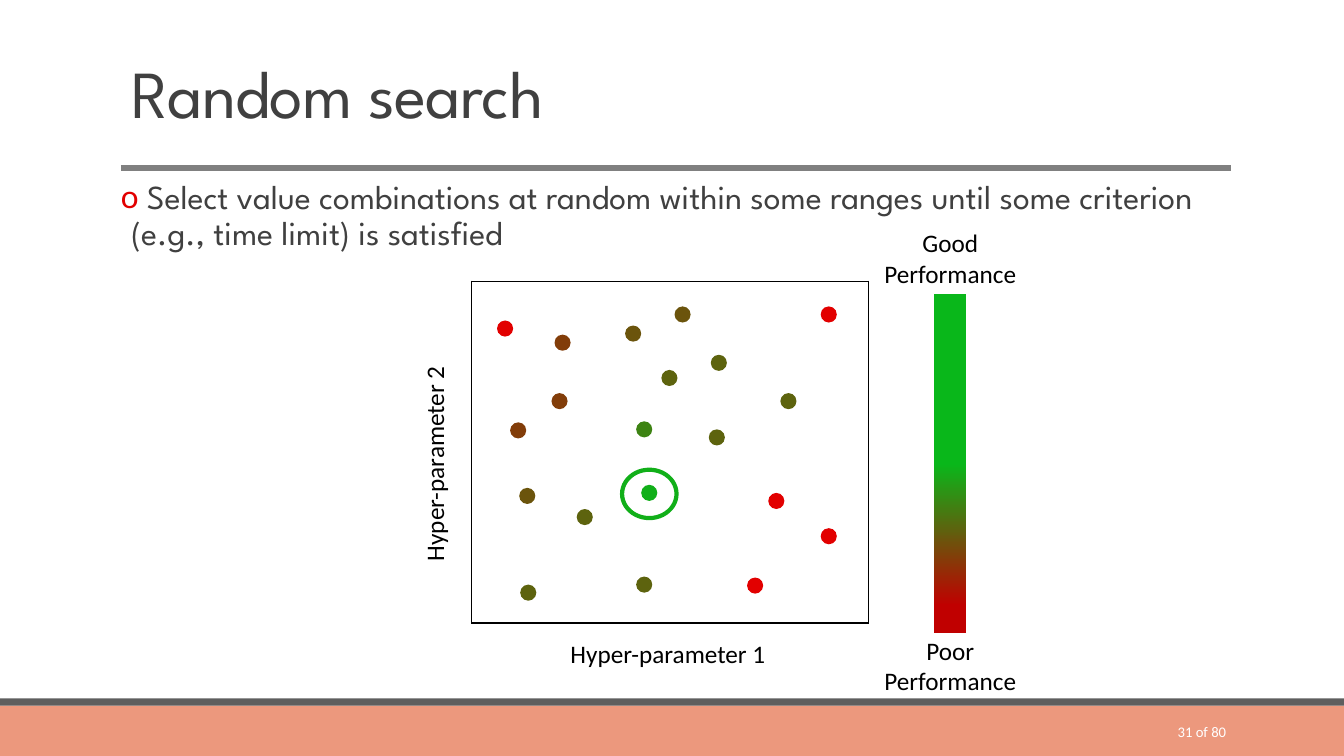
from pptx import Presentation
from pptx import util as u
from pptx.dml.color import RGBColor
from pptx.enum import shapes, text
from pptx.oxml import parse_xml
from pptx.oxml.ns import nsdecls

Inches, Pt = u.Inches, u.Pt
HEADING, PLAIN = "League Spartan", "Calibri"
RED, BROWN, UMBER, OLIVE = "E20000", "823D09", "6B540C", "5D630E"
LEAF, GREEN, BLACK, GREY = "3D8313", "11AF19", "000000", "404040"
DOT_SIZE = 0.16

# Left and top of each sampled combination, grouped by performance colour
SAMPLES = {
    RED: [(8.14, 5.24), (7.62, 4.89), (7.41, 5.73), (8.14, 3.04), (4.93, 3.18)],
    BROWN: [(5.5, 3.32), (5.47, 3.9), (5.06, 4.19)],
    UMBER: [(5.15, 4.84), (6.2, 3.23), (6.69, 3.04)],
    OLIVE: [(7.74, 3.9), (7.03, 4.26), (5.16, 5.8), (5.72, 5.05),
            (6.56, 3.67), (6.31, 5.72), (7.05, 3.52)],
    LEAF: [(6.31, 4.18)],
    GREEN: [(6.36, 4.81)],
}


def colour(value):
    return RGBColor.from_string(value)


def place(item, left, top, width, height):
    item.left, item.top = Inches(left), Inches(top)
    item.width, item.height = Inches(width), Inches(height)


def write(box, lines, size=18, font=PLAIN, fill=BLACK, align="LEFT",
          anchor="TOP", spacing=None):
    """Fill a text box or placeholder with one paragraph per line."""
    frame = box.text_frame
    frame.word_wrap = True
    frame.auto_size = text.MSO_AUTO_SIZE.NONE
    frame.vertical_anchor = getattr(text.MSO_ANCHOR, anchor)
    for index, line in enumerate(lines):
        para = frame.add_paragraph() if index else frame.paragraphs[0]
        para.alignment = getattr(text.PP_ALIGN, align)
        para.space_before = Pt(0)
        para.line_spacing = spacing
        span = para.add_run()
        span.text = line
        span.font.size, span.font.name = Pt(size), font
        span.font.color.rgb = colour(fill)
    return frame


def add_label(page, lines, left, top, width, height, rotation=0, **style):
    box = page.shapes.add_textbox(0, 0, 0, 0)
    place(box, left, top, width, height)
    box.rotation = rotation
    write(box, lines, **style)


def add_figure(page, kind, left, top, width, height, fill=None, outline=None):
    figure = page.shapes.add_shape(getattr(shapes.MSO_SHAPE, kind), 0, 0, 0, 0)
    place(figure, left, top, width, height)
    figure.shadow.inherit = False
    if fill:
        figure.fill.solid()
        figure.fill.fore_color.rgb = colour(fill)
    else:
        figure.fill.background()
    if outline:
        figure.line.color.rgb = colour(outline)
        figure.line.width = Pt(3)
    else:
        figure.line.fill.background()
    return figure


def add_rule(page, left, right, y):
    rule = page.shapes.add_connector(shapes.MSO_CONNECTOR.STRAIGHT, Inches(left),
                                     Inches(y), Inches(right), Inches(y))
    rule.line.color.rgb = colour("808080")
    rule.line.width = Pt(4.25)
    rule._element.spPr.append(parse_xml(f"<a:effectLst {nsdecls('a')}/>"))


def add_bullet(para, mark, fill):
    props = para._p.get_or_add_pPr()
    props.set("marL", str(Inches(0.1)))
    props.set("indent", str(-Inches(0.1)))
    for xml in (f'<a:buClr {nsdecls("a")}><a:srgbClr val="{fill}"/></a:buClr>',
                f'<a:buFont {nsdecls("a")} typeface="{PLAIN}"/>',
                f'<a:buChar {nsdecls("a")} char="{mark}"/>'):
        props.append(parse_xml(xml))


def add_search_space(page, left, top, width, height, count=6):
    """Draw an empty square grid with a border around its outside only."""
    frame = page.shapes.add_table(count, count, Inches(left), Inches(top),
                                  Inches(width), Inches(height))
    grid = frame.table
    grid.first_row = grid.horz_banding = False
    for index in range(count):
        grid.columns[index].width = Inches(width / count)
        grid.rows[index].height = Inches(height / count)
    last = count - 1
    for row in range(count):
        for column in range(count):
            cell = grid.cell(row, column)
            props = cell._tc.get_or_add_tcPr()
            edges = {"lnL": column == 0, "lnR": column == last,
                     "lnT": row == 0, "lnB": row == last}
            for tag, outer in edges.items():
                paint = (f'<a:solidFill><a:srgbClr val="{BLACK}"/></a:solidFill>'
                         if outer else "<a:noFill/>")
                props.append(parse_xml(
                    f'<a:{tag} {nsdecls("a")} w="{Pt(1)}">{paint}</a:{tag}>'))
            cell.fill.background()


def add_scale(page, left, top, width, height):
    bar = add_figure(page, "RECTANGLE", left, top, width, height)
    bar.fill.gradient()
    bar.fill.gradient_angle = 270
    stops = zip(bar.fill.gradient_stops, ((0.5, "09B71A"), (0.92, "C00000")))
    for stop, (position, value) in stops:
        stop.position = position
        stop.color.rgb = colour(value)


def main():
    deck = Presentation()
    deck.slide_width, deck.slide_height = Inches(13.33), Inches(7.5)
    page = deck.slides.add_slide(deck.slide_layouts[1])

    # Footer band and rule under the title
    add_figure(page, "RECTANGLE", 0, 7, 13.33, 0.5, fill="EC987D")
    add_figure(page, "RECTANGLE", 0, 6.93, 13.33, 0.07, fill="5E5E5E")
    add_rule(page, 1.2, 12.21, 1.67)

    # Title and bullet
    title, body = page.placeholders
    place(title, 1.2, 0.31, 11, 1.32)
    frame = write(title, ["Random search"], size=48, font=HEADING, fill=GREY,
                  anchor="MIDDLE", spacing=0.85)
    frame.paragraphs[0].runs[0].font._element.set("spc", "-50")
    place(body, 1.2, 1.74, 11, 1.05)
    frame = write(body, [" Select value combinations at random within some ranges "
                         "until some criterion (e.g., time limit) is satisfied"],
                  size=24, font=HEADING, fill=GREY, spacing=0.9)
    frame.margin_left = frame.margin_right = 0
    para = frame.paragraphs[0]
    para.space_before, para.space_after = Pt(12), Pt(2)
    add_bullet(para, "o", RED)

    # Search space with its samples; the best one is ringed
    add_search_space(page, 4.68, 2.79, 3.94, 3.39)
    for fill, spots in SAMPLES.items():
        for left, top in spots:
            add_figure(page, "OVAL", left, top, DOT_SIZE, DOT_SIZE, fill=fill)
    add_figure(page, "OVAL", 6.17, 4.66, 0.54, 0.48, outline=GREEN)
    add_label(page, ["Hyper-parameter 1"], 5.56, 6.28, 2.29, 0.4)
    add_label(page, ["Hyper-parameter 2"], 3.16, 4.32, 2.29, 0.4, rotation=270)

    # Performance scale
    add_scale(page, 9.26, 2.92, 0.32, 3.36)
    for word, top in (("Good", 2.21), ("Poor", 6.25)):
        add_label(page, [word, "Performance"], 8.63, top, 1.59, 0.71, align="CENTER")

    # Page number
    add_label(page, ["31 of 80"], 10.83, 7.06, 1.43, 0.4, size=10.5, fill="FFFFFF",
              align="RIGHT", anchor="MIDDLE")
    deck.save("out.pptx")


if __name__ == "__main__":
    main()
